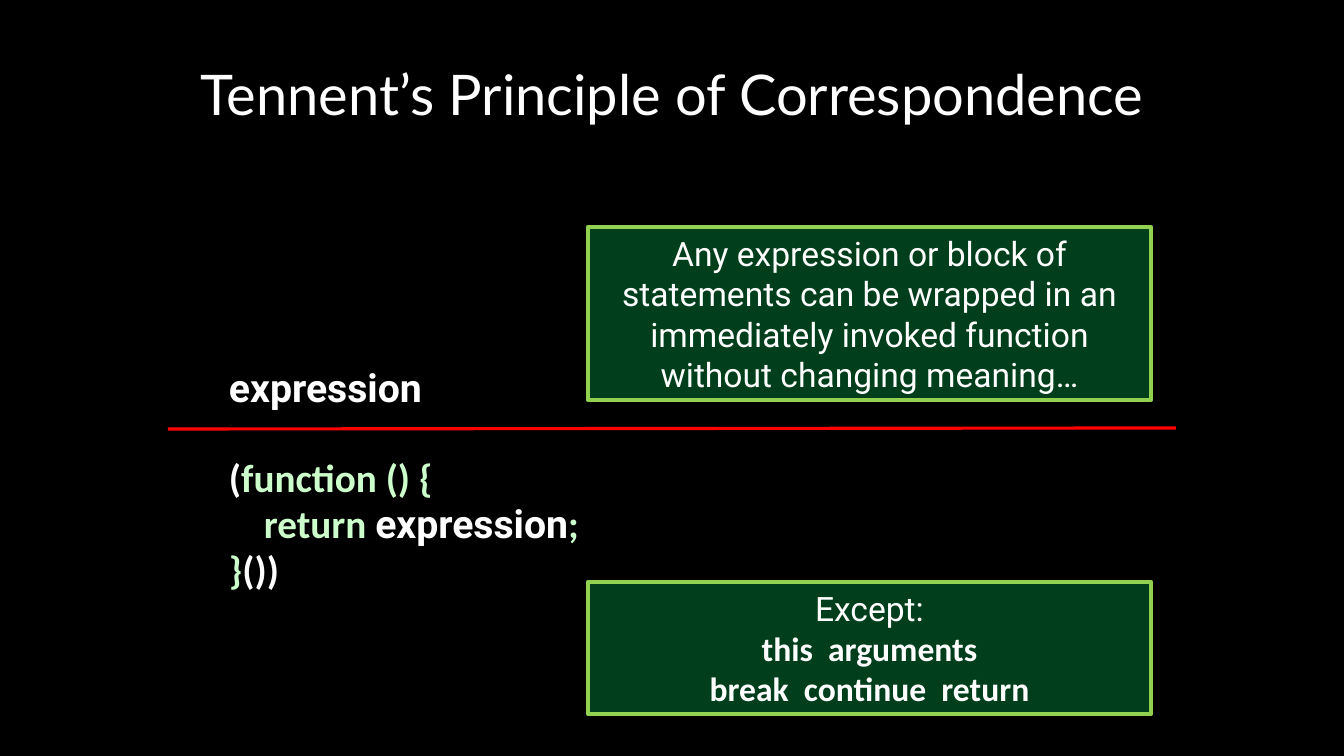
from lxml import etree
from pptx import Presentation
from pptx.dml.color import RGBColor
from pptx.enum.shapes import MSO_CONNECTOR, MSO_SHAPE
from pptx.enum.text import MSO_ANCHOR, PP_ALIGN
from pptx.oxml.ns import qn
from pptx.util import Pt

RECT = MSO_SHAPE.RECTANGLE
LINE = MSO_CONNECTOR.STRAIGHT
MIDDLE = MSO_ANCHOR.MIDDLE
TOP = MSO_ANCHOR.TOP
CENTER = PP_ALIGN.CENTER
LEFT = PP_ALIGN.LEFT

SCALE = 914400 / 100.8
COLORS = {
    "back": "000000",
    "text": "FFFFFF",
    "code": "CCFFCC",
    "rule": "FF0101",
    "fill": "003E1C",
    "edge": "92D050",
}


def px(count):
    return round(count * SCALE)


def paint(name):
    return RGBColor.from_string(COLORS[name])


def style(font, face, size, bold=False, color="text"):
    font.name = face
    font.size = Pt(size)
    font.bold = bold
    font.color.rgb = paint(color)


def add_text(slide, box, anchor):
    frame = slide.shapes.add_textbox(*map(px, box)).text_frame
    frame.word_wrap = True
    frame.vertical_anchor = anchor
    frame.margin_left = frame.margin_right = 0
    frame.margin_top = frame.margin_bottom = 0
    return frame


def add_title(slide, box, text):
    para = add_text(slide, box, MIDDLE).paragraphs[0]
    para.text = text
    para.alignment = CENTER
    style(para.font, "Lato", 40)


def add_code(slide, box, lines):
    frame = add_text(slide, box, TOP)
    for index, (indent, parts) in enumerate(lines):
        para = frame.add_paragraph() if index else frame.paragraphs[0]
        para.alignment = LEFT
        para.line_spacing = Pt(33)
        if indent:
            para._p.get_or_add_pPr().set("marL", str(px(indent)))
        for text, face, color in parts:
            run = para.add_run()
            run.text = text
            style(run.font, face, 28, True, color)


def add_rule(slide, start, end):
    rule = slide.shapes.add_connector(LINE, *map(px, start + end))
    rule.line.color.rgb = paint("rule")
    rule.line.width = Pt(2.25)
    etree.SubElement(rule._element.spPr, qn("a:effectLst"))


def add_note(slide, box, lines):
    note = slide.shapes.add_shape(RECT, *map(px, box))
    note.shadow.inherit = False
    note.fill.solid()
    note.fill.fore_color.rgb = paint("fill")
    note.line.color.rgb = paint("edge")
    note.line.width = Pt(3)
    frame = note.text_frame
    frame.word_wrap = True
    frame.vertical_anchor = MIDDLE
    for index, (text, face, bold) in enumerate(lines):
        para = frame.add_paragraph() if index else frame.paragraphs[0]
        para.text = text
        para.alignment = CENTER
        style(para.font, face, 24, bold)


def build(slide):
    slide.background.fill.solid()
    slide.background.fill.fore_color.rgb = paint("back")
    add_title(slide, (67, 30, 1210, 126),
              "Tennent’s Principle of Correspondence")
    term = ("expression", "Roboto", "text")
    add_code(slide, (229, 364, 340, 46), [(0, [term])])
    add_code(slide, (229, 454, 500, 138), [
        (0, [("(", "Calibri", "text"),
             ("function () {", "Calibri", "code")]),
        (35, [("return ", "Calibri", "code"), term,
              (";", "Calibri", "code")]),
        (0, [("}", "Calibri", "code"), ("())", "Calibri", "text")]),
    ])
    add_rule(slide, (168, 429), (1176, 428))
    left, width = 588, 563
    add_note(slide, (left, 582, width, 132), [
        ("Except:", "Roboto", False),
        ("this  arguments", "Calibri", True),
        ("break  continue  return", "Calibri", True),
    ])
    add_note(slide, (left, 227, width, 173), [
        ("Any expression or block of statements can be wrapped in an "
         "immediately invoked function without changing meaning…",
         "Roboto", False),
    ])


def main():
    deck = Presentation()
    deck.slide_width = px(1344)
    deck.slide_height = px(756)
    build(deck.slides.add_slide(deck.slide_layouts[6]))
    deck.save("out.pptx")


if __name__ == "__main__":
    main()
